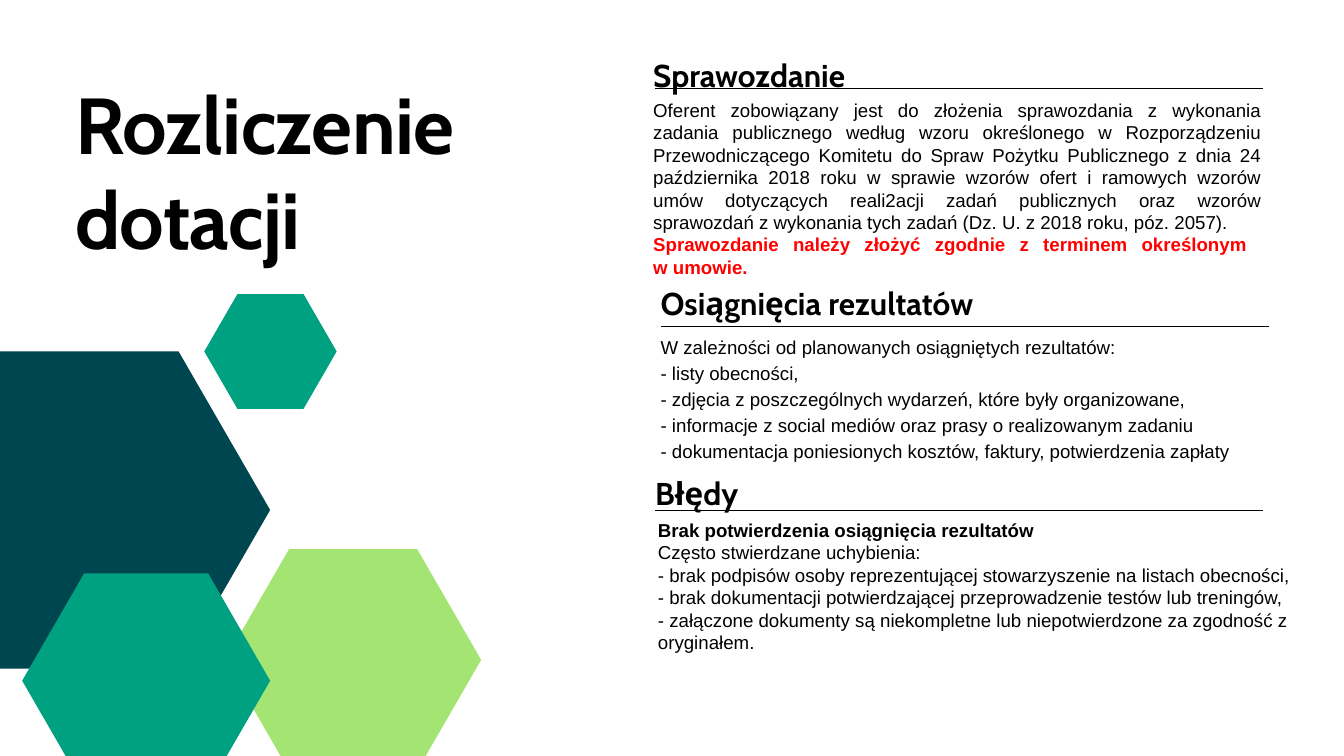
from dataclasses import dataclass
from math import sqrt

from lxml import etree
from pptx import Presentation
from pptx import util as u
from pptx.dml import color as c
from pptx.enum import shapes, text
from pptx.oxml import ns


@dataclass(frozen=True)
class Theme:
    """Colours, fonts and type sizes of the deck."""
    ink: str = "000000"
    alert: str = "FF0000"
    navy: str = "004651"
    teal: str = "00A181"
    lime: str = "A4E473"
    display: str = "Cabin"
    plain: str = "Arial"
    title_size: float = 85
    heading_size: float = 33.8
    body_size: float = 20
    rule_width: float = 0.75


class SlideBuilder:
    """Holds the theme and the current slide and adds each kind of element."""

    def __init__(self, slide, theme):
        self.slide = slide
        self.theme = theme

    def place(self, holder, box):
        """Moves a placeholder, or a new text box when there is none, to the box."""
        area = [u.Inches(value) for value in box]
        if holder is None:
            return self.slide.shapes.add_textbox(*area)
        for name, value in zip(("left", "top", "width", "height"), area):
            setattr(holder, name, value)
        return holder

    def typeset(self, holder, box, lines, font, size, leading=1.0,
                align=text.PP_ALIGN.LEFT, tracking=None):
        """Sets lines of (words, bold, colour) in one type style."""
        frame = self.place(holder, box).text_frame
        settings = {"margin_left": 0, "margin_top": 0, "margin_right": 0,
                    "margin_bottom": 0, "word_wrap": True,
                    "auto_size": text.MSO_AUTO_SIZE.NONE,
                    "vertical_anchor": text.MSO_ANCHOR.TOP}
        for name, value in settings.items():
            setattr(frame, name, value)
        for index, (words, bold, colour) in enumerate(lines):
            line = frame.add_paragraph() if index else frame.paragraphs[0]
            line.text = words
            layout = {"alignment": align, "line_spacing": leading,
                      "space_before": u.Pt(0), "space_after": u.Pt(0)}
            for name, value in layout.items():
                setattr(line, name, value)
            properties = line._p.get_or_add_pPr()
            properties.set("marL", "0")
            properties.set("indent", "0")
            etree.SubElement(properties, ns.qn("a:buNone"))
            for run in line.runs:
                style = {"name": font, "size": u.Pt(size), "bold": bold}
                for name, value in style.items():
                    setattr(run.font, name, value)
                run.font.color.rgb = c.RGBColor.from_string(colour)
                if tracking:
                    run._r.get_or_add_rPr().set("spc", str(round(tracking * 100)))

    def title(self, words, box):
        """Sets the slide title."""
        theme = self.theme
        self.typeset(self.slide.shapes.title, box, [(words, True, theme.ink)],
                     theme.display, theme.title_size, u.Pt(102), tracking=-0.8)

    def heading(self, holder, words, box):
        """Sets a section heading."""
        theme = self.theme
        self.typeset(holder, box, [(words, True, theme.ink)],
                     theme.display, theme.heading_size, u.Pt(40.5))

    def body(self, holder, lines, box, **layout):
        """Sets the text of a section."""
        self.typeset(holder, box, lines, self.theme.plain, self.theme.body_size, **layout)

    def hexagon(self, left, middle, width, colour):
        """Draws a regular hexagon with flat top and bottom sides."""
        half = width * sqrt(3) / 4
        corners = [(0, 0), (0.25, -half), (0.75, -half),
                   (1, 0), (0.75, half), (0.25, half)]
        points = [(u.Inches(left + part * width), u.Inches(middle + rise))
                  for part, rise in corners]
        outline = self.slide.shapes.build_freeform(*points[0], scale=1.0)
        outline.add_line_segments(points[1:], close=True)
        shape = outline.convert_to_shape()
        shape.shadow.inherit = False
        shape.fill.solid()
        shape.fill.fore_color.rgb = c.RGBColor.from_string(colour)
        shape.line.fill.background()

    def rule(self, left, top, width):
        """Draws a thin horizontal line."""
        line = self.slide.shapes.add_connector(
            shapes.MSO_CONNECTOR.STRAIGHT, u.Inches(left), u.Inches(top),
            u.Inches(left + width), u.Inches(top))
        line.line.color.rgb = c.RGBColor.from_string(self.theme.ink)
        line.line.width = u.Pt(self.theme.rule_width)
        etree.SubElement(line._element.spPr, ns.qn("a:effectLst"))


def main():
    """Builds the slide on settling a grant."""
    deck = Presentation()
    deck.slide_width, deck.slide_height = u.Inches(20), u.Inches(11.25)
    slide = deck.slides.add_slide(deck.slide_layouts[4])
    theme = Theme()
    builder = SlideBuilder(slide, theme)
    results_heading, results, errors_heading, errors = list(slide.placeholders)[1:]

    builder.title("Rozliczenie dotacji", (1.12, 1.12, 6.03, 2.82))

    for hexagon in [(-1.43, 7.59, 5.45, theme.navy), (3.35, 9.82, 3.81, theme.lime),
                    (3.04, 5.23, 1.97, theme.teal), (0.33, 10.13, 3.69, theme.teal)]:
        builder.hexagon(*hexagon)

    report_lines = [
        ("Oferent zobowiązany jest do złożenia sprawozdania z wykonania zadania "
         "publicznego według wzoru określonego w Rozporządzeniu Przewodniczącego "
         "Komitetu do Spraw Pożytku Publicznego z dnia 24 października 2018 roku "
         "w sprawie wzorów ofert i ramowych wzorów umów dotyczących reali2acji zadań "
         "publicznych oraz wzorów sprawozdań z wykonania tych zadań "
         "(Dz. U. z 2018 roku, póz. 2057).", False, theme.ink),
        ("Sprawozdanie należy złożyć zgodnie z terminem określonym \vw umowie. ",
         True, theme.alert),
    ]
    result_lines = [(words, False, theme.ink) for words in (
        "W zależności od planowanych osiągniętych rezultatów:",
        "- listy obecności,",
        "- zdjęcia z poszczególnych wydarzeń, które były organizowane,",
        "- informacje z social mediów oraz prasy o realizowanym zadaniu",
        "- dokumentacja poniesionych kosztów, faktury, potwierdzenia zapłaty",
    )]
    error_lines = [("Brak potwierdzenia osiągnięcia rezultatów", True, theme.ink)]
    error_lines += [(words, False, theme.ink) for words in (
        "Często stwierdzane uchybienia:",
        "- brak podpisów osoby reprezentującej stowarzyszenie na listach obecności,",
        "- brak dokumentacji potwierdzającej przeprowadzenie testów lub treningów,",
        "- załączone dokumenty są niekompletne lub niepotwierdzone za zgodność "
        "z oryginałem.",
    )]

    builder.heading(None, "Sprawozdanie", (9.72, 0.84, 9.05, 0.57))
    builder.body(None, report_lines, (9.72, 1.47, 9.05, 2.69),
                 align=text.PP_ALIGN.JUSTIFY)
    builder.heading(results_heading, "Osiągnięcia rezultatów", (9.83, 4.22, 9.05, 0.57))
    builder.body(results, result_lines, (9.83, 4.94, 9.05, 2.33), leading=u.Pt(28))
    builder.heading(errors_heading, "Błędy", (9.75, 7.05, 9.55, 0.57))
    builder.body(errors, error_lines, (9.79, 7.72, 9.55, 2.02))

    for left, top in [(9.75, 1.31), (9.83, 4.86), (9.75, 7.59)]:
        builder.rule(left, top, 9.05)

    deck.save("out.pptx")


if __name__ == "__main__":
    main()
